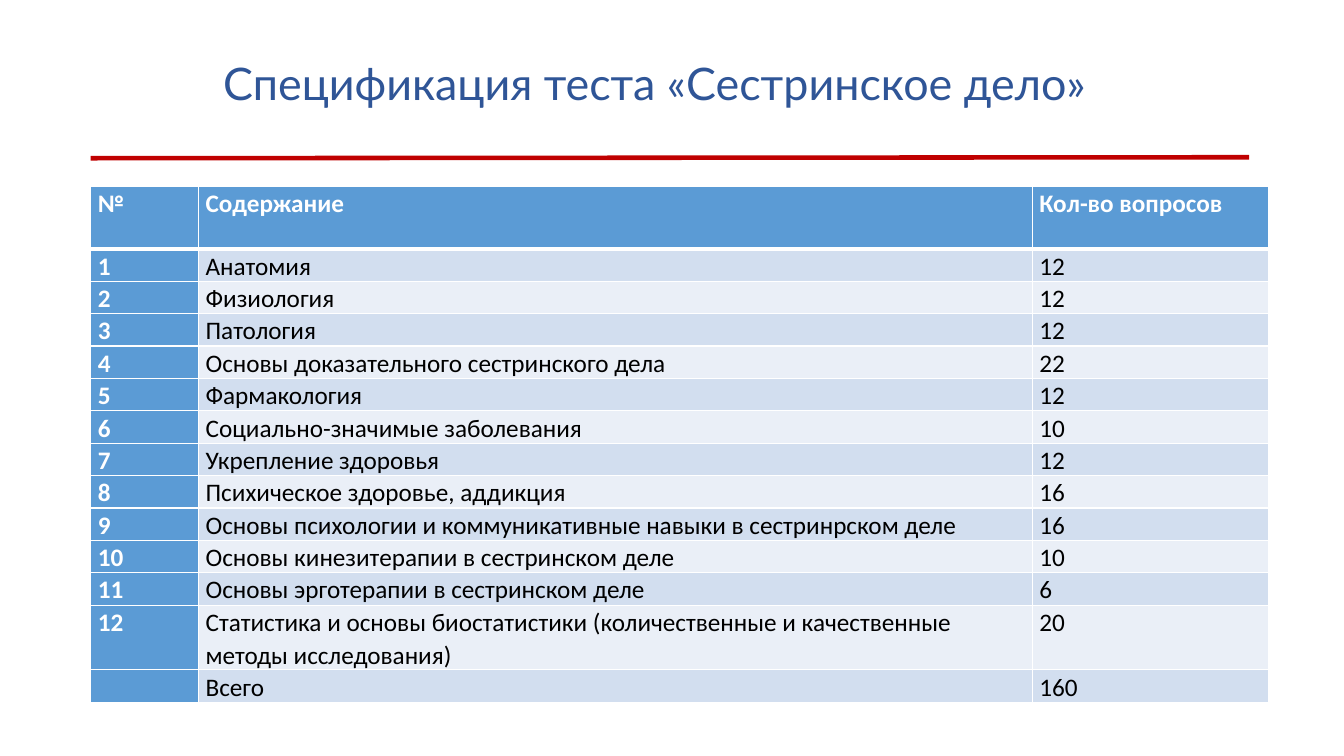
"""Build the slide with the nursing test specification table."""
import lxml.etree
import pptx
import pptx.dml.color
import pptx.enum.shapes
import pptx.enum.text
import pptx.oxml.ns
import pptx.util

Inches = pptx.util.Inches
Pt = pptx.util.Pt
RGBColor = pptx.dml.color.RGBColor
qn = pptx.oxml.ns.qn

TITLE_BLUE = RGBColor(0x2F, 0x55, 0x97)
RULE_RED = RGBColor(0xC0, 0x00, 0x00)
HEADER_BLUE = RGBColor(0x5B, 0x9B, 0xD5)
BANDS = RGBColor(0xEA, 0xEF, 0xF7), RGBColor(0xD2, 0xDE, 0xEF)
WHITE = RGBColor(0xFF, 0xFF, 0xFF)
BLACK = RGBColor(0x00, 0x00, 0x00)

LEFT = 0.9
COLUMN_WIDTHS = 1.07, 8.27, 2.34
ROW_HEIGHT = 0.31
DOUBLE_ROWS = 0, 12

TOPICS = [
    ("Анатомия", 12),
    ("Физиология", 12),
    ("Патология", 12),
    ("Основы доказательного сестринского дела", 22),
    ("Фармакология", 12),
    ("Социально-значимые заболевания", 10),
    ("Укрепление здоровья", 12),
    ("Психическое здоровье, аддикция", 16),
    ("Основы психологии и коммуникативные навыки в сестринрском деле", 16),
    ("Основы кинезитерапии в сестринском деле", 10),
    ("Основы эрготерапии в сестринском деле", 6),
    ("Статистика и основы биостатистики (количественные и качественные методы исследования)", 20),
]
rows = [("№", "Содержание", "Кол-во вопросов")]
rows += [(str(number), topic, str(count)) for number, (topic, count) in enumerate(TOPICS, 1)]
rows.append(("", "Всего", str(sum(count for topic, count in TOPICS))))


def add_run(paragraph, text, font_name, size, color, bold=False):
    run = paragraph.add_run()
    run.text = text
    run.font.name = font_name
    run.font.size = Pt(size)
    run.font.color.rgb = color
    run.font.bold = bold


def set_borders(cell, top, bottom):
    properties = cell._tc.get_or_add_tcPr()
    for index, (side, width) in enumerate((("L", 1), ("R", 1), ("T", top), ("B", bottom))):
        border = lxml.etree.Element(qn(f"a:ln{side}"), w=str(Pt(width)))
        fill = lxml.etree.SubElement(border, qn("a:solidFill"))
        lxml.etree.SubElement(fill, qn("a:srgbClr"), val=str(WHITE))
        properties.insert(index, border)


presentation = pptx.Presentation()
presentation.slide_width = Inches(13.33)
presentation.slide_height = Inches(7.5)
slide = presentation.slides.add_slide(presentation.slide_layouts[6])

title = slide.shapes.add_textbox(Inches(0.58), Inches(0.4), Inches(11.83), Inches(1.45))
title_frame = title.text_frame
title_frame.word_wrap = True
title_frame.vertical_anchor = pptx.enum.text.MSO_ANCHOR.MIDDLE
title_frame.margin_bottom = Inches(0.6)
paragraph = title_frame.paragraphs[0]
paragraph.alignment = pptx.enum.text.PP_ALIGN.CENTER
paragraph.line_spacing = 0.9
add_run(paragraph, "Спецификация теста «Сестринское дело»", "Lato", 32, TITLE_BLUE)

rule = slide.shapes.add_connector(
    pptx.enum.shapes.MSO_CONNECTOR.STRAIGHT,
    Inches(LEFT), Inches(1.57), Inches(12.39), Inches(1.56))
rule.line.color.rgb = RULE_RED
rule.line.width = Pt(3.25)
lxml.etree.SubElement(rule._element.spPr, qn("a:effectLst"))

table_height = ROW_HEIGHT * (len(rows) + len(DOUBLE_ROWS))
table = slide.shapes.add_table(
    len(rows), len(COLUMN_WIDTHS), Inches(LEFT), Inches(1.85),
    Inches(sum(COLUMN_WIDTHS)), Inches(table_height)).table
table.first_col = True
for column, width in zip(table.columns, COLUMN_WIDTHS):
    column.width = Inches(width)

for row_index, texts in enumerate(rows):
    table.rows[row_index].height = Inches(ROW_HEIGHT * (2 if row_index in DOUBLE_ROWS else 1))
    for column_index, text in enumerate(texts):
        cell = table.cell(row_index, column_index)
        heading = row_index == 0 or column_index == 0
        cell.margin_left = cell.margin_right = Inches(0.07)
        cell.margin_top = cell.margin_bottom = 0
        cell.fill.solid()
        cell.fill.fore_color.rgb = HEADER_BLUE if heading else BANDS[row_index % 2]
        set_borders(cell, 3 if row_index == 1 else 1, 3 if row_index == 0 else 1)
        paragraph = cell.text_frame.paragraphs[0]
        paragraph.line_spacing = 1.07
        if text:
            add_run(paragraph, text, "Calibri", 18, WHITE if heading else BLACK, heading)

presentation.save("out.pptx")
